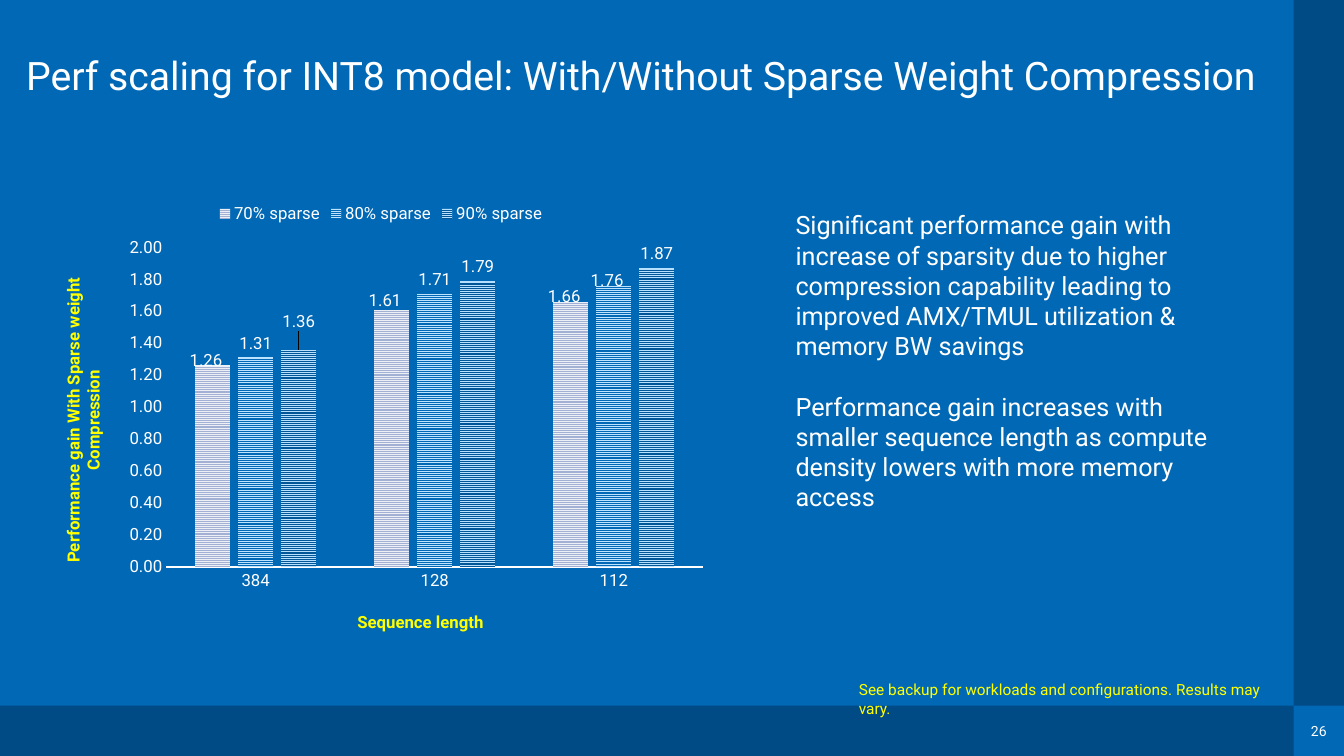
from dataclasses import dataclass

from lxml.etree import SubElement
from pptx import Presentation
from pptx.chart.data import CategoryChartData
from pptx.dml.color import RGBColor
from pptx.enum.chart import XL_CHART_TYPE as ChartType, XL_LABEL_POSITION as LabelPosition
from pptx.enum.chart import XL_LEGEND_POSITION as LegendPosition, XL_TICK_MARK as TickMark
from pptx.enum.dml import MSO_PATTERN as Pattern
from pptx.enum.shapes import MSO_SHAPE as Shape
from pptx.enum.text import MSO_ANCHOR as Anchor, MSO_AUTO_SIZE as AutoSize, PP_ALIGN as Align
from pptx.oxml import parse_xml
from pptx.oxml.ns import nsdecls, qn
from pptx.util import Inches, Pt

TITLE = "Perf scaling for INT8 model: With/Without Sparse Weight Compression"
FINDINGS = [
    "Significant performance gain with increase of sparsity due to higher compression "
    "capability leading to improved AMX/TMUL utilization & memory BW savings",
    "Performance gain increases with smaller sequence length as compute density lowers "
    "with more memory access",
]
FOOTNOTE = "See backup for workloads and configurations. Results may vary."
PAGE_NUMBER = "26"
SEQUENCE_LENGTHS = ["384", "128", "112"]
GAINS = {
    "70% sparse": (1.26, 1.61, 1.66),
    "80% sparse": (1.31, 1.71, 1.76),
    "90% sparse": (1.36, 1.79, 1.87),
}
LABEL_SHIFTS = {
    "70% sparse": {0: (-0.01, 0.02), 1: (-0.01, 0.01), 2: (-0.01, 0.02)},
    "80% sparse": {2: (-0.01, 0.02)},
    "90% sparse": {0: (0, -0.03)},
}
CATEGORY_TITLE = "Sequence length"
VALUE_TITLE = "Performance gain With Sparse weight Compression"

WIDTH, HEIGHT, BAND = 13.33, 7.5, 0.5
TITLE_BOX = (0.16, 0.12, 12.66, 1.31)
FINDINGS_BOX = (7.79, 2.03, 4.71, 2.83)
CHART_BOX = (0.45, 1.91, 6.66, 4.53)
FOOTNOTE_BOX = (8.42, 6.7, 4.42, 0.3)
PLOT_SHARE = {"x": 0.18, "y": 0.12, "w": 0.8, "h": 0.7}
CATEGORY_TITLE_SHARE = {"x": 0.46, "y": 0.91}
VALUE_TITLE_SHARE = {"x": 0.02, "y": 0.18}


@dataclass(frozen=True)
class Theme:
    font: str = "Roboto"
    background: str = "0068B5"
    band: str = "004A86"
    text: str = "FFFFFF"
    accent: str = "FFFF00"
    stripes: tuple = (("A2B1D3", "ECEFF6"), ("0068B5", "BDE3FF"), ("005696", "B7E0FF"))
    title_size: int = 28
    body_size: int = 18
    chart_size: int = 12
    note_size: int = 11
    page_size: int = 10


THEME = Theme()


def color(value):
    return RGBColor.from_string(value)


def style(font, size, shade=THEME.text, bold=False):
    font.name, font.size, font.bold = THEME.font, Pt(size), bold
    font.color.rgb = color(shade)


def place(shape, box):
    shape.left, shape.top, shape.width, shape.height = map(Inches, box)


def write(shape, lines, size, shade=THEME.text, align=Align.LEFT):
    frame = shape.text_frame
    frame.text = "\n".join(lines)
    frame.auto_size = AutoSize.NONE
    frame.word_wrap = True
    for paragraph in frame.paragraphs:
        paragraph.alignment = align
        for run in paragraph.runs:
            style(run.font, size, shade)
    return frame


def add_band(slide, box):
    band = slide.shapes.add_shape(Shape.RECTANGLE, *map(Inches, box))
    band.shadow.inherit = False
    band.fill.solid()
    band.fill.fore_color.rgb = color(THEME.band)
    band.line.fill.background()


def set_layout(element, index, shares, edge=True, inner=False):
    existing = element.find(qn("c:layout"))
    if existing is not None:
        element.remove(existing)
    layout = parse_xml(f"<c:layout {nsdecls('c')}><c:manualLayout/></c:layout>")
    values = {"layoutTarget": "inner"} if inner else {}
    if edge:
        values.update(xMode="edge", yMode="edge")
    values.update(shares)
    for name, value in values.items():
        SubElement(layout[0], qn(f"c:{name}")).set("val", str(value))
    element.insert(index, layout)


def style_axis(axis, title, shares):
    axis.major_tick_mark = axis.minor_tick_mark = TickMark.NONE
    axis.has_major_gridlines = False
    style(axis.tick_labels.font, THEME.chart_size)
    frame = axis.axis_title.text_frame
    frame.text = title
    style(frame.paragraphs[0].runs[0].font, THEME.chart_size, THEME.accent, bold=True)
    set_layout(axis.axis_title._element, 1, shares)


def style_series(series, stripe):
    fill = series.format.fill
    fill.patterned()
    fill.pattern = Pattern.NARROW_HORIZONTAL
    fill.fore_color.rgb, fill.back_color.rgb = map(color, stripe)
    labels = series.data_labels
    labels.show_value = True
    labels.position = LabelPosition.OUTSIDE_END
    labels.number_format, labels.number_format_is_linked = "0.00", False
    style(labels.font, THEME.chart_size)
    for index, (x, y) in LABEL_SHIFTS[series.name].items():
        label = series.points[index].data_label
        style(label.font, THEME.chart_size)
        label.position = LabelPosition.OUTSIDE_END
        element = labels._element.findall(qn("c:dLbl"))[-1]
        set_layout(element, 1, {"x": x, "y": y}, edge=False)


def add_gain_chart(slide):
    data = CategoryChartData(number_format="0.00")
    data.categories = SEQUENCE_LENGTHS
    for name, values in GAINS.items():
        data.add_series(name, values)
    frame = slide.shapes.add_chart(ChartType.COLUMN_CLUSTERED, *map(Inches, CHART_BOX), data)
    chart = frame.chart
    style(chart.font, THEME.page_size)
    chart.has_title = False
    chart.has_legend = True
    chart.legend.position = LegendPosition.TOP
    chart.legend.include_in_layout = False
    style(chart.legend.font, THEME.chart_size)

    plot = chart.plots[0]
    plot.gap_width, plot.overlap, plot.vary_by_categories = 164, -22, False
    for series, stripe in zip(plot.series, THEME.stripes):
        style_series(series, stripe)

    categories, values = chart.category_axis, chart.value_axis
    style_axis(categories, CATEGORY_TITLE, CATEGORY_TITLE_SHARE)
    style_axis(values, VALUE_TITLE, VALUE_TITLE_SHARE)
    categories.format.line.color.rgb = color(THEME.text)
    categories.format.line.width = Pt(1.5)
    values.format.line.fill.background()
    values.minimum_scale, values.maximum_scale, values.major_unit = 0, 2, 0.2
    values.tick_labels.number_format = "0.00"
    values.tick_labels.number_format_is_linked = False
    plot_area = chart._chartSpace.find(f".//{qn('c:plotArea')}")
    set_layout(plot_area, 0, PLOT_SHARE, inner=True)


def add_findings(body):
    place(body, FINDINGS_BOX)
    frame = write(body, FINDINGS, THEME.body_size)
    for index, paragraph in enumerate(frame.paragraphs):
        properties = paragraph._p.get_or_add_pPr()
        properties.set("marL", "0")
        properties.set("indent", "0")
        SubElement(properties, qn("a:buNone"))
        paragraph.space_before = Pt(21.5 if index else 0)


def main():
    presentation = Presentation()
    presentation.slide_width, presentation.slide_height = Inches(WIDTH), Inches(HEIGHT)
    slide = presentation.slides.add_slide(presentation.slide_layouts[1])
    slide.background.fill.solid()
    slide.background.fill.fore_color.rgb = color(THEME.background)
    add_band(slide, (0, HEIGHT - BAND, WIDTH - BAND, BAND))
    add_band(slide, (WIDTH - BAND, 0, BAND, HEIGHT - BAND))

    place(slide.shapes.title, TITLE_BOX)
    title = write(slide.shapes.title, [TITLE], THEME.title_size)
    title.vertical_anchor = Anchor.MIDDLE
    title.paragraphs[0].line_spacing = 0.9
    add_findings(slide.placeholders[1])
    add_gain_chart(slide)

    footnote = slide.shapes.add_textbox(*map(Inches, FOOTNOTE_BOX))
    write(footnote, [FOOTNOTE], THEME.note_size, THEME.accent)
    corner = (WIDTH - BAND, HEIGHT - BAND, BAND, BAND)
    page = slide.shapes.add_textbox(*map(Inches, corner))
    write(page, [PAGE_NUMBER], THEME.page_size, align=Align.CENTER).vertical_anchor = Anchor.MIDDLE
    presentation.save("out.pptx")


if __name__ == "__main__":
    main()
